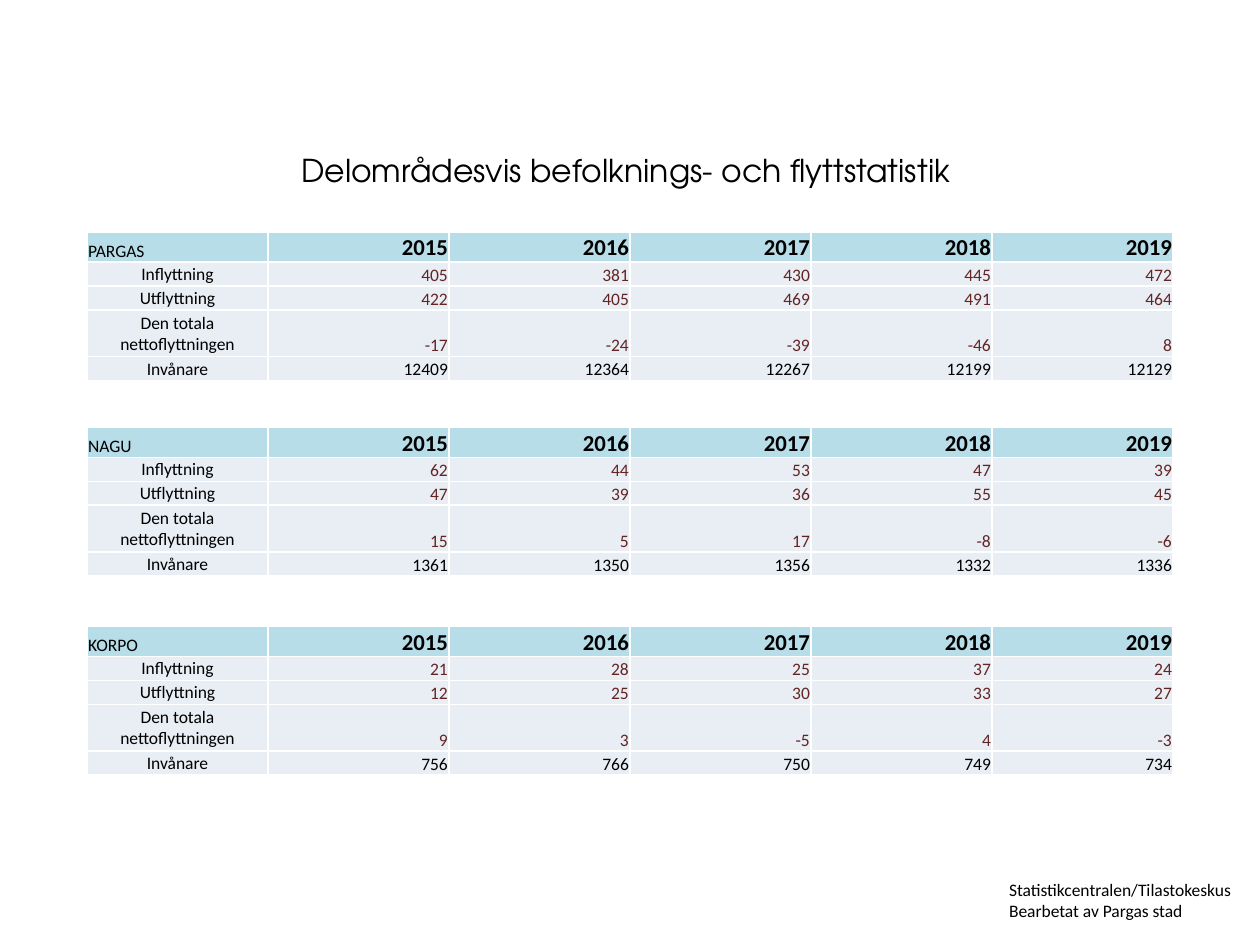
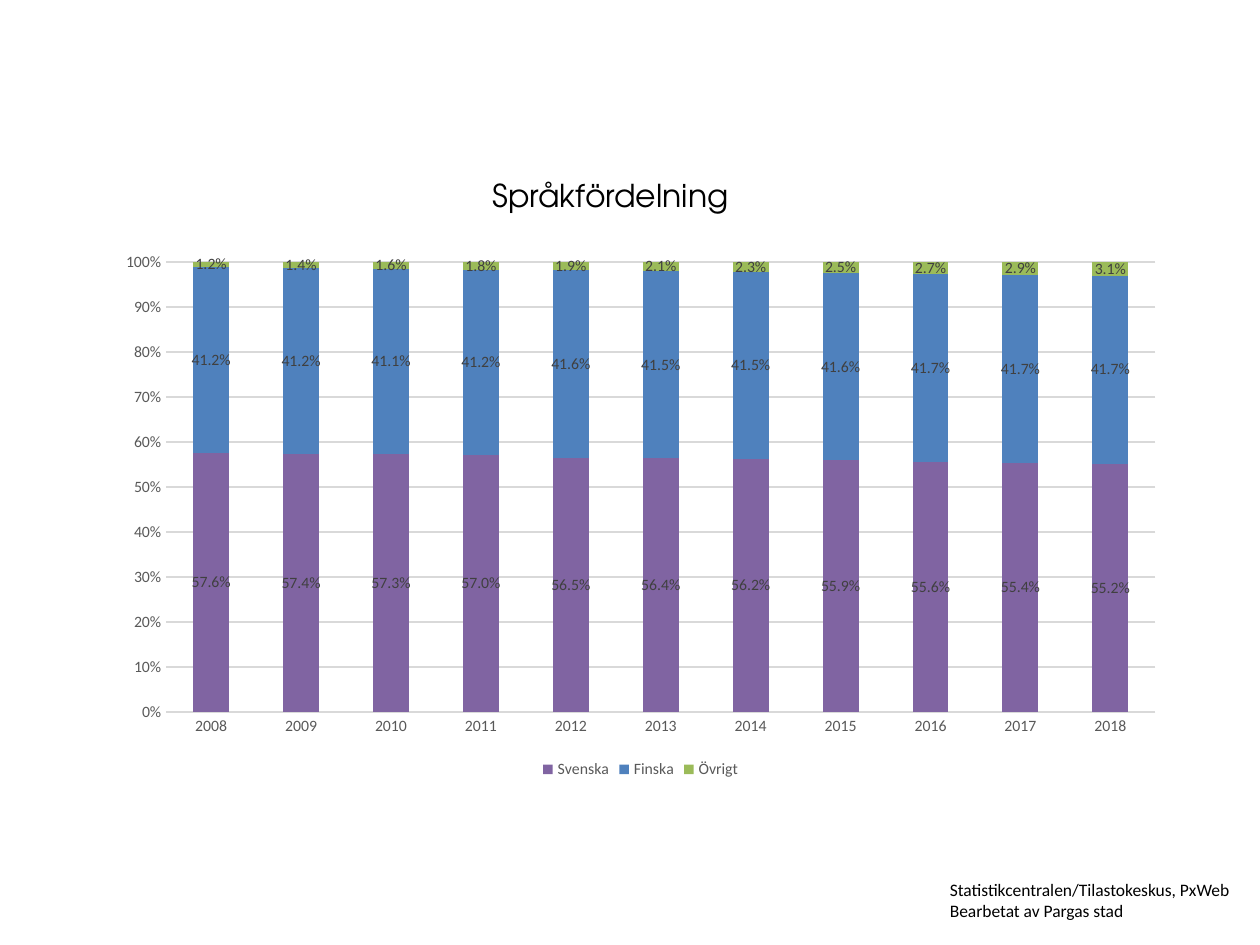
from dataclasses import dataclass

from lxml import etree
from pptx import Presentation
from pptx import util as u
from pptx.chart.data import CategoryChartData
from pptx.dml.color import RGBColor
from pptx.enum import chart as ch
from pptx.enum import text as t
from pptx.oxml import ns

# The slide is a grid of 100 columns by 75 rows
COLS, ROWS = 100, 75
SLIDE_W, SLIDE_H = u.Inches(10), u.Inches(7.5)

BODY_FONT, TITLE_FONT = "Calibri", "TeX Gyre Adventor"
BLACK, WHITE = "000000", "FFFFFF"
HEADER_FILL, BODY_FILL, FLOW_TEXT = "B7DEE8", "E9EDF4", "632523"
GRID_LINE, AXIS_TEXT, LABEL_TEXT = "D9D9D9", "595959", "404040"

FOOTER_RIGHT, FOOTER_TOP, FOOTER_H = 99.3, 69.3, 4.4
TABLE_LEFT, TABLE_W = 6.9, 86.2
TABLE_ROWS = (2.4, 1.9, 1.9, 3.7, 1.9)
YEARS = range(2015, 2020)
ROW_LABELS = ("Inflyttning", "Utflyttning", "Den totala nettoflyttningen", "Invånare")


@dataclass
class Box:
    """A rectangle in grid columns and rows."""
    left: float
    top: float
    width: float
    height: float

    def emu(self) -> tuple:
        return (across(self.left), down(self.top), across(self.width), down(self.height))


@dataclass
class Area:
    """One part of the town with its yearly figures, a tuple per row label."""
    name: str
    top: float
    figures: tuple


@dataclass
class Language:
    name: str
    color: str
    shares: tuple


AREAS = (
    Area("PARGAS", 18.4, ((405, 381, 430, 445, 472),
                          (422, 405, 469, 491, 464),
                          (-17, -24, -39, -46, 8),
                          (12409, 12364, 12267, 12199, 12129))),
    Area("NAGU", 33.9, ((62, 44, 53, 47, 39),
                        (47, 39, 36, 55, 45),
                        (15, 5, 17, -8, -6),
                        (1361, 1350, 1356, 1332, 1336))),
    Area("KORPO", 49.7, ((21, 28, 25, 37, 24),
                         (12, 25, 30, 33, 27),
                         (9, 3, -5, 4, -3),
                         (756, 766, 750, 749, 734))),
)

LANGUAGES = (
    Language("Svenska", "8064A2", (0.576, 0.574, 0.573, 0.57, 0.565, 0.564,
                                   0.562, 0.559, 0.556, 0.554, 0.552)),
    Language("Finska", "4F81BD", (0.412, 0.412, 0.411, 0.412, 0.416, 0.415,
                                  0.415, 0.416, 0.417, 0.417, 0.417)),
    Language("Övrigt", "9BBB59", (0.012, 0.014, 0.016, 0.018, 0.019, 0.021,
                                  0.023, 0.025, 0.027, 0.029, 0.031)),
)


def across(columns: float) -> u.Emu:
    return u.Emu(round(SLIDE_W * columns / COLS))


def down(rows: float) -> u.Emu:
    return u.Emu(round(SLIDE_H * rows / ROWS))


def rgb(value: str) -> RGBColor:
    return RGBColor.from_string(value)


def style_font(font, size: float, color: str = BLACK, name: str = BODY_FONT,
               bold: bool = False) -> None:
    font.size, font.name, font.bold = u.Pt(size), name, bold
    font.color.rgb = rgb(color)


def add_run(p, text: str, size: float, **style) -> None:
    r = p.add_run()
    r.text = text
    style_font(r.font, size, **style)


def add_titled_slide(prs, title: str, box: Box):
    s = prs.slides.add_slide(prs.slide_layouts.get_by_name("Title Only"))
    sp = s.shapes.title
    sp.left, sp.top, sp.width, sp.height = box.emu()
    tf = sp.text_frame
    tf.word_wrap = True
    tf.auto_size = t.MSO_AUTO_SIZE.NONE
    tf.vertical_anchor = t.MSO_ANCHOR.TOP
    p = tf.paragraphs[0]
    p.alignment = t.PP_ALIGN.LEFT
    add_run(p, title, 18, name=TITLE_FONT)
    return s


def add_source(s, source: str, width: float) -> None:
    box = Box(FOOTER_RIGHT - width, FOOTER_TOP, width, FOOTER_H)
    tf = s.shapes.add_textbox(*box.emu()).text_frame
    tf.word_wrap = True
    p = tf.paragraphs[0]
    add_run(p, source, 10)
    p.add_line_break()
    add_run(p, "Bearbetat av Pargas stad", 10)


def add_borders(cell) -> None:
    """Draw thin white lines on all four sides; call before filling the cell."""
    tc_pr = cell._tc.get_or_add_tcPr()
    for side in ("a:lnL", "a:lnR", "a:lnT", "a:lnB"):
        ln = etree.SubElement(tc_pr, ns.qn(side), w=str(u.Pt(1)))
        fill = etree.SubElement(ln, ns.qn("a:solidFill"))
        etree.SubElement(fill, ns.qn("a:srgbClr"), val=WHITE)


def fill_cell(cell, text: str, fill: str, align, size: float = 10,
              anchor=t.MSO_ANCHOR.BOTTOM, **style) -> None:
    add_borders(cell)
    cell.fill.solid()
    cell.fill.fore_color.rgb = rgb(fill)
    cell.margin_left = cell.margin_right = cell.margin_top = across(0.1)
    cell.margin_bottom = 0
    cell.vertical_anchor = anchor
    p = cell.text_frame.paragraphs[0]
    p.alignment = align
    add_run(p, text, size, **style)


def add_area_table(s, area: Area) -> None:
    box = Box(TABLE_LEFT, area.top, TABLE_W, sum(TABLE_ROWS))
    n_cols = len(YEARS) + 1
    table = s.shapes.add_table(len(TABLE_ROWS), n_cols, *box.emu()).table
    table.horz_banding = False
    for column in table.columns:
        column.width = across(TABLE_W / n_cols)
    for row, height in zip(table.rows, TABLE_ROWS):
        row.height = down(height)

    left, center, right = t.PP_ALIGN.LEFT, t.PP_ALIGN.CENTER, t.PP_ALIGN.RIGHT
    fill_cell(table.cell(0, 0), area.name, HEADER_FILL, left)
    for c, year in enumerate(YEARS, 1):
        fill_cell(table.cell(0, c), str(year), HEADER_FILL, right, size=13, bold=True)
    for r, (label, figures) in enumerate(zip(ROW_LABELS, area.figures), 1):
        fill_cell(table.cell(r, 0), label, BODY_FILL, center, anchor=t.MSO_ANCHOR.MIDDLE)
        color = BLACK if label == "Invånare" else FLOW_TEXT
        for c, figure in enumerate(figures, 1):
            fill_cell(table.cell(r, c), str(figure), BODY_FILL, right, color=color)


def style_axis(axis) -> None:
    axis.major_tick_mark = axis.minor_tick_mark = ch.XL_TICK_MARK.NONE
    style_font(axis.tick_labels.font, 9, AXIS_TEXT)


def style_line(line) -> None:
    line.color.rgb = rgb(GRID_LINE)
    line.width = u.Pt(0.75)


def add_language_chart(s, box: Box) -> None:
    data = CategoryChartData(number_format="0.0%")
    data.categories = [str(year) for year in range(2008, 2019)]
    for language in LANGUAGES:
        data.add_series(language.name, language.shares)
    kind = ch.XL_CHART_TYPE.COLUMN_STACKED_100
    chart = s.shapes.add_chart(kind, *box.emu(), data).chart
    style_font(chart.font, 10)
    chart.has_title = False
    chart.has_legend = True
    chart.legend.position = ch.XL_LEGEND_POSITION.BOTTOM
    chart.legend.include_in_layout = False
    style_font(chart.legend.font, 9, AXIS_TEXT)

    years, shares = chart.category_axis, chart.value_axis
    style_axis(years)
    style_line(years.format.line)
    style_axis(shares)
    shares.format.line.fill.background()
    style_line(shares.major_gridlines.format.line)
    shares.minimum_scale, shares.maximum_scale, shares.major_unit = 0, 1, 0.1
    shares.tick_labels.number_format = "0%"
    shares.tick_labels.number_format_is_linked = False

    plot = chart.plots[0]
    plot.gap_width, plot.overlap = 150, 100
    plot.vary_by_categories = False
    for series, language in zip(plot.series, LANGUAGES):
        series.format.fill.solid()
        series.format.fill.fore_color.rgb = rgb(language.color)
        labels = series.data_labels
        labels.show_value = True
        labels.position = ch.XL_LABEL_POSITION.CENTER
        labels.number_format = "0.0%"
        labels.number_format_is_linked = False
        style_font(labels.font, 9, LABEL_TEXT)


def main() -> None:
    prs = Presentation()
    prs.slide_width, prs.slide_height = SLIDE_W, SLIDE_H

    s = add_titled_slide(prs, "Delområdesvis befolknings- och flyttstatistik",
                         Box(22.9, 11.5, 60.6, 7.1))
    for area in AREAS:
        add_area_table(s, area)
    add_source(s, "Statistikcentralen/Tilastokeskus", 20.2)

    s = add_titled_slide(prs, "Språkfördelning", Box(38.1, 13.5, 21.3, 4))
    add_language_chart(s, Box(8.3, 19.2, 85.1, 43))
    add_source(s, "Statistikcentralen/Tilastokeskus, PxWeb", 24.9)

    prs.save("out.pptx")


if __name__ == "__main__":
    main()
